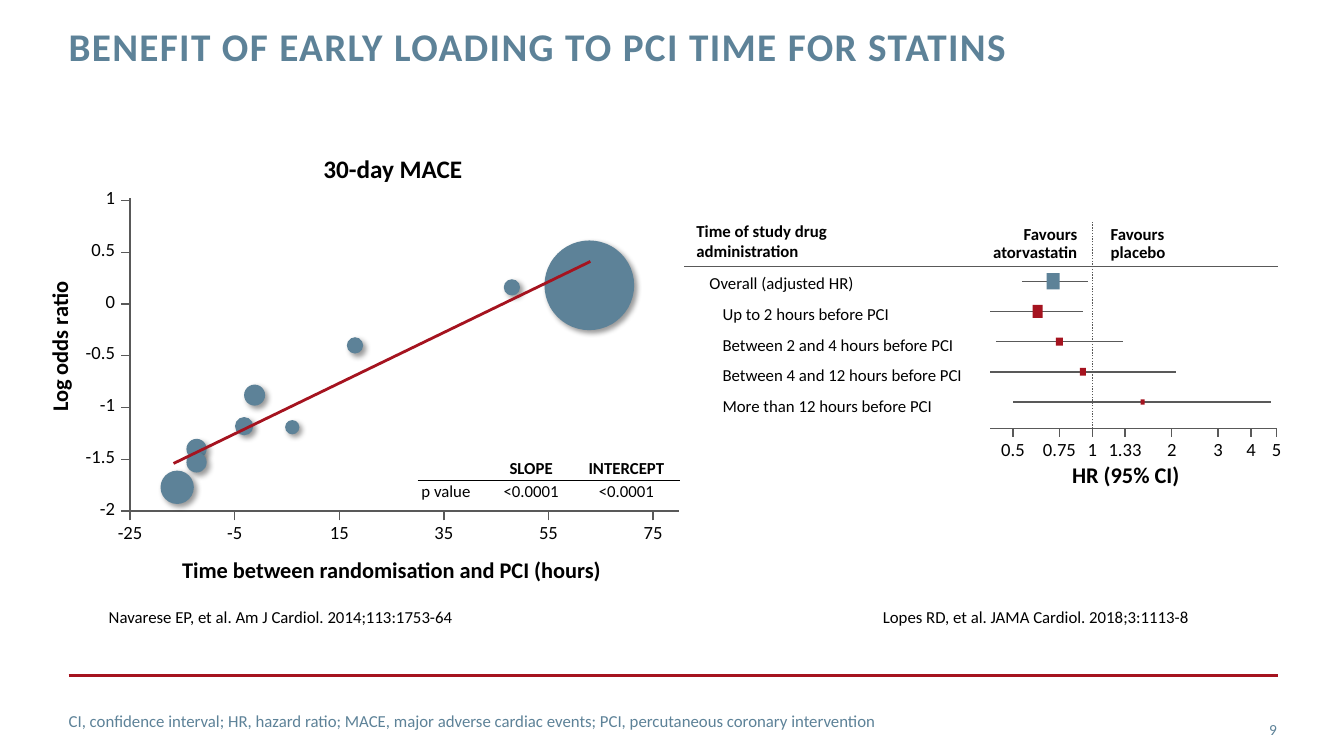
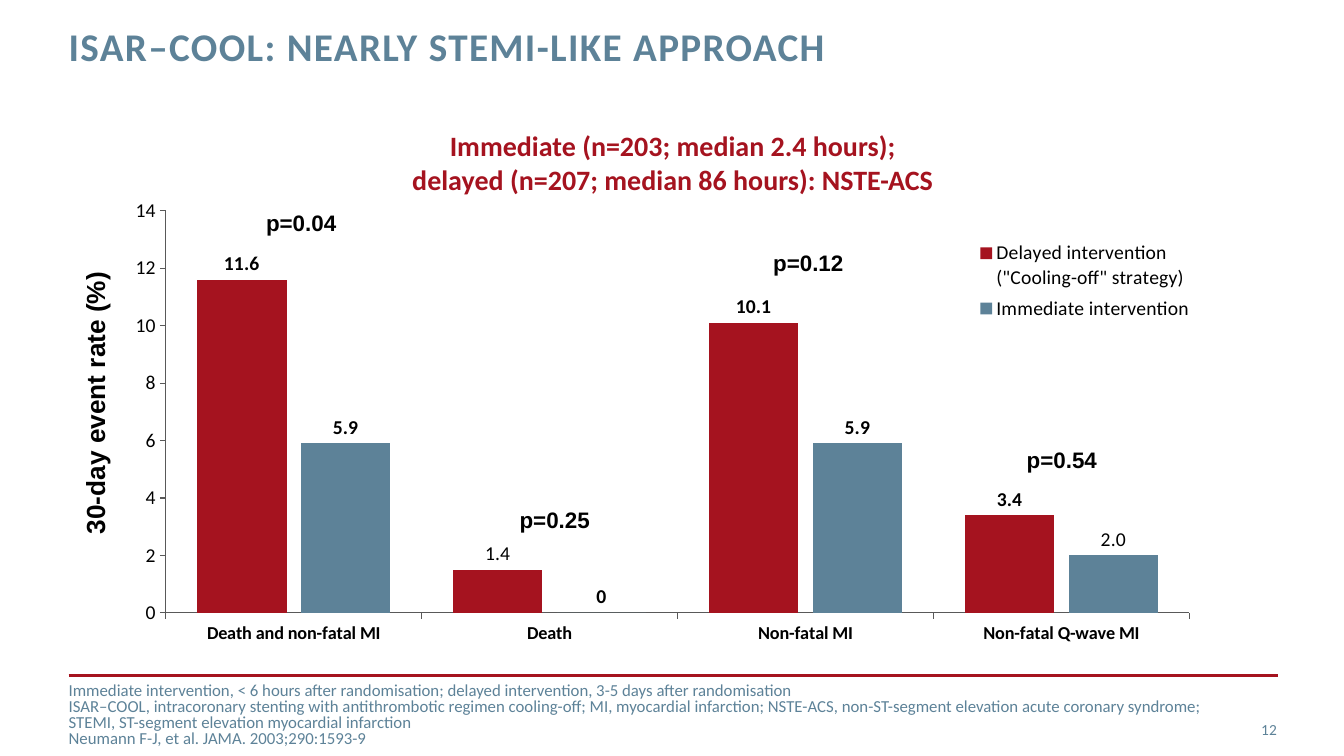
from dataclasses import dataclass
from math import log2

from lxml import etree
from pptx import Presentation
from pptx.chart.data import CategoryChartData
from pptx.dml.color import RGBColor
from pptx.enum import chart as charts, dml, shapes, text
from pptx.oxml import parse_xml
from pptx.oxml.ns import nsdecls, qn
from pptx.util import Cm, Pt

LEFT, CENTER, RIGHT = text.PP_ALIGN.LEFT, text.PP_ALIGN.CENTER, text.PP_ALIGN.RIGHT


@dataclass(frozen=True)
class Theme:
    blue: RGBColor = RGBColor(0x5D, 0x82, 0x98)
    red: RGBColor = RGBColor(0xA5, 0x13, 0x1F)
    black: RGBColor = RGBColor(0, 0, 0)
    grey: RGBColor = RGBColor(0x59, 0x59, 0x59)
    font: str = "Calibri"
    accent_font: str = "Arial"
    title: float = 28
    heading: float = 20
    axis_title: float = 16
    tick: float = 13.3
    chart: float = 14
    small: float = 12
    page: float = 11


THEME = Theme()


# Text helpers
def style_font(font, size, color=THEME.black, bold=False, name=THEME.font):
    font.name, font.size, font.bold = name, Pt(size), bold
    font.color.rgb = color


def prepare_frame(text_frame, anchor=text.MSO_ANCHOR.TOP):
    text_frame.margin_left = text_frame.margin_right = 0
    text_frame.margin_top = text_frame.margin_bottom = 0
    text_frame.word_wrap = True
    text_frame.auto_size = text.MSO_AUTO_SIZE.NONE
    text_frame.vertical_anchor = anchor


def write(text_frame, lines, size, align=LEFT, spacing=1.0, bullets_off=False, **style):
    for index, line in enumerate(lines):
        paragraph = text_frame.add_paragraph() if index else text_frame.paragraphs[0]
        paragraph.text = line
        paragraph.alignment = align
        paragraph.line_spacing = spacing
        paragraph.space_before = Pt(0)
        if bullets_off:
            properties = paragraph._p.get_or_add_pPr()
            properties.set("marL", "0")
            properties.set("indent", "0")
            etree.SubElement(properties, qn("a:buNone"))
        style_font(paragraph.font, size, **style)


def place(shape, box):
    shape.left, shape.top, shape.width, shape.height = map(Cm, box)


def add_label(slide, label, box, size, align=CENTER, spacing=0.9, rotation=0,
              anchor=text.MSO_ANCHOR.TOP, **style):
    shape = slide.shapes.add_textbox(*map(Cm, box))
    shape.rotation = rotation
    prepare_frame(shape.text_frame, anchor)
    write(shape.text_frame, [label], size, align, spacing, **style)


def fill_body(placeholder, lines, box, size, anchor=text.MSO_ANCHOR.TOP, **style):
    place(placeholder, box)
    prepare_frame(placeholder.text_frame, anchor)
    write(placeholder.text_frame, lines, size, bullets_off=True, **style)


# Drawing helpers
def add_line(slide, start, end, color=THEME.grey, width=1, dash=None):
    line = slide.shapes.add_connector(
        shapes.MSO_CONNECTOR.STRAIGHT, *map(Cm, (*start, *end)))
    line.line.color.rgb = color
    line.line.width = Pt(width)
    if dash:
        line.line.dash_style = dash
    etree.SubElement(line._element.spPr, qn("a:effectLst"))


def add_marker(slide, kind, center, size, color):
    (x, y), (width, height) = center, size
    marker = slide.shapes.add_shape(
        kind, *map(Cm, (x - width / 2, y - height / 2, width, height)))
    marker.fill.solid()
    marker.fill.fore_color.rgb = color
    marker.line.fill.background()
    marker.shadow.inherit = False
    return marker


def add_soft_shadow(shape):
    shape._element.spPr.find(qn("a:effectLst")).append(parse_xml(
        f'<a:outerShdw {nsdecls("a")} blurRad="50800" dist="38100" dir="2700000" '
        'algn="tl" rotWithShape="0"><a:srgbClr val="000000">'
        '<a:alpha val="40000"/></a:srgbClr></a:outerShdw>'))


# Title, rule, footnote and page number shared by the slides
def add_slide(presentation, layout, title, footnotes, footnote_box, spacing, page):
    slide = presentation.slides.add_slide(presentation.slide_layouts[layout])
    add_line(slide, (1.73, 17.02), (32.21, 17.02), THEME.red, 2)
    place(slide.shapes.title, (1.73, 0.69, 28, 2.24))
    prepare_frame(slide.shapes.title.text_frame)
    write(slide.shapes.title.text_frame, [title], THEME.title, spacing=Pt(30),
          color=THEME.blue, bold=True)
    slide.shapes.title.text_frame.paragraphs[0].font._element.set("spc", "100")
    fill_body(slide.placeholders[1], footnotes, footnote_box, THEME.small,
              text.MSO_ANCHOR.MIDDLE, spacing=spacing, color=THEME.blue)
    add_label(slide, page, (30, 17.86, 2.18, 1.02), THEME.page, RIGHT, 1.0,
              anchor=text.MSO_ANCHOR.MIDDLE, color=THEME.blue)
    return slide


# Scatter of effect against time
def scatter_point(hours, log_odds):
    return 3.28 + (hours + 25) / 100 * 13.18, 12.88 - (log_odds + 2) * 2.61


def add_scatter(slide):
    left, bottom = scatter_point(-25, -2)
    add_line(slide, (left - 0.23, bottom), (17.12, bottom))
    add_line(slide, (left, bottom), (left, 5))
    for value in ("1", "0.5", "0", "-0.5", "-1", "-1.5", "-2"):
        y = scatter_point(0, float(value))[1]
        add_line(slide, (left - 0.23, y), (left, y))
        add_label(slide, value, (1.9, y - 0.3, 1, 0.51), THEME.tick, RIGHT)
    for hours in range(-25, 76, 20):
        x = scatter_point(hours, 0)[0]
        add_line(slide, (x, bottom + 0.23), (x, bottom))
        add_label(slide, str(hours), (x - 0.5, 13.18, 1, 0.51), THEME.tick)
    add_label(slide, "30-day MACE", (7.4, 3.94, 5, 0.69), 18, bold=True)
    add_label(slide, "Log odds ratio", (-0.13, 8.43, 3.33, 0.61),
              THEME.axis_title, rotation=270, bold=True)
    add_label(slide, "Time between randomisation and PCI (hours)",
              (3.87, 14.1, 12, 0.61), THEME.axis_title, bold=True)

    # Hours, log odds ratio, bubble diameter
    bubbles = ((18, -0.4, 0.41), (48, 0.16, 0.41), (-3.2, -1.18, 0.46),
               (6, -1.19, 0.36), (-1.2, -0.88, 0.53), (62.8, 0.18, 2.26),
               (-12.3, -1.4, 0.51), (-12.3, -1.53, 0.51), (-16, -1.77, 0.84))
    for hours, log_odds, diameter in bubbles:
        bubble = add_marker(slide, shapes.MSO_SHAPE.OVAL, scatter_point(hours, log_odds),
                            (diameter, diameter), THEME.blue)
        add_soft_shadow(bubble)
    add_line(slide, scatter_point(-16.7, -1.54), scatter_point(63, 0.41), THEME.red, 2)


def add_p_value_table(slide):
    rows = (("", "SLOPE", "INTERCEPT"), ("p value", "<0.0001", "<0.0001"))
    table = slide.shapes.add_table(2, 3, *map(Cm, (10.54, 11.53, 6.58, 1.16))).table
    table.first_row = table.horz_banding = False
    for column, width in zip(table.columns, (1.78, 2.13, 2.67)):
        column.width = Cm(width)
    for row_index, row in enumerate(rows):
        for column_index, value in enumerate(row):
            cell = table.cell(row_index, column_index)
            cell.margin_left = cell.margin_right = Cm(0.08)
            cell.margin_top = cell.margin_bottom = Cm(0.03)
            write(cell.text_frame, [value], THEME.small,
                  LEFT if column_index == 0 else CENTER, bold=row_index == 0)
            side = "lnT" if row_index else "lnB"
            cell._tc.get_or_add_tcPr().append(parse_xml(
                f'<a:{side} {nsdecls("a")} w="9525"><a:solidFill>'
                f'<a:srgbClr val="{THEME.black}"/></a:solidFill></a:{side}>'))
            cell.fill.background()


# Forest plot of hazard ratios on a log scale
def hazard_x(ratio):
    return 27.53 + 2 * log2(ratio)


def add_forest_plot(slide):
    axis_y = 10.8
    add_line(slide, (hazard_x(0.41), axis_y), (hazard_x(5), axis_y))
    for ratio in ("0.5", "0.75", "1", "1.33", "2", "3", "4", "5"):
        x = hazard_x(float(ratio))
        add_line(slide, (x, axis_y + 0.2), (x, axis_y))
        add_label(slide, ratio, (x - 0.6, 11.1, 1.2, 0.51), THEME.tick)
    add_label(slide, "HR (95% CI)", (26.37, 11.71, 4, 0.61), THEME.axis_title, bold=True)
    add_line(slide, (hazard_x(1), axis_y), (hazard_x(1), 5.59),
             dash=dml.MSO_LINE.ROUND_DOT)
    add_line(slide, (17.25, 6.71), (32.21, 6.71))
    add_label(slide, "Favours\natorvastatin", (24.15, 5.69, 3, 0.91), THEME.small,
              RIGHT, bold=True)
    add_label(slide, "Favours\nplacebo", (27.99, 5.69, 3, 0.91), THEME.small,
              LEFT, bold=True)

    # Subgroup, low, estimate, high, marker size
    groups = (
        ("Overall (adjusted HR)", 0.54, 0.71, 0.96, (0.33, 0.41)),
        ("Up to 2 hours before PCI", 0.41, 0.62, 0.92, (0.25, 0.33)),
        ("Between 2 and 4 hours before PCI", 0.43, 0.75, 1.31, (0.18, 0.2)),
        ("Between 4 and 12 hours before PCI", 0.41, 0.92, 2.08, (0.15, 0.2)),
        ("More than 12 hours before PCI", 0.5, 1.55, 4.75, (0.1, 0.13)),
    )
    for index, (_, low, estimate, high, size) in enumerate(groups):
        y = 7.09 + index * 0.76
        add_line(slide, (hazard_x(low), y), (hazard_x(high), y))
        add_marker(slide, shapes.MSO_SHAPE.RECTANGLE, (hazard_x(estimate), y), size,
                   THEME.red if index else THEME.blue)

    names = slide.shapes.add_textbox(*map(Cm, (17.55, 5.56, 7.2, 4.95))).text_frame
    prepare_frame(names)
    write(names, ["Time of study drug\nadministration"] + [group[0] for group in groups],
          THEME.small)
    heading, *rows = names.paragraphs
    heading.font.bold = True
    heading.space_after = Pt(4)
    for index, row in enumerate(rows):
        row.line_spacing, row.space_after = 1.33, Pt(2.7)
        row._p.get_or_add_pPr().set("marL", str(Cm(0.66 if index else 0.33)))


# Column chart of event rates
def set_layout(parent, position, x, y, width, height, inner=False):
    for layout in parent.findall(qn("c:layout")):
        parent.remove(layout)
    target = '<c:layoutTarget val="inner"/>' if inner else ""
    parent.insert(position, parse_xml(
        f'<c:layout {nsdecls("c")}><c:manualLayout>{target}'
        '<c:xMode val="edge"/><c:yMode val="edge"/>'
        f'<c:x val="{x}"/><c:y val="{y}"/><c:w val="{width}"/><c:h val="{height}"/>'
        '</c:manualLayout></c:layout>'))


def style_axis(axis, size, bold=False):
    axis.has_major_gridlines = False
    axis.major_tick_mark = charts.XL_TICK_MARK.OUTSIDE
    axis.format.line.color.rgb = THEME.grey
    axis.format.line.width = Pt(0.75)
    style_font(axis.tick_labels.font, size, bold=bold)


def add_event_chart(slide):
    data = CategoryChartData()
    data.categories = ("Death and non-fatal MI", "Death", "Non-fatal MI",
                       "Non-fatal Q-wave MI")
    data.add_series('Delayed intervention ("Cooling-off" strategy)', (11.6, 1.5, 10.1, 3.4))
    data.add_series("Immediate intervention", (5.9, 0, 5.9, 2))
    chart = slide.shapes.add_chart(charts.XL_CHART_TYPE.COLUMN_CLUSTERED,
                                   *map(Cm, (2.79, 4.72, 27.74, 11.79)), data).chart
    chart.has_title = False
    style_font(chart.font, 10)
    style_axis(chart.category_axis, 13, bold=True)
    style_axis(chart.value_axis, THEME.chart)
    chart.value_axis.minimum_scale, chart.value_axis.maximum_scale = 0, 14
    chart.value_axis.major_unit = 2

    plot = chart.plots[0]
    plot.gap_width, plot.overlap, plot.vary_by_categories = 70, -16, False
    custom_labels = ((1, "1.4"), (3, "2.0"))
    for series, color, (point, label) in zip(
            plot.series, (THEME.red, THEME.blue), custom_labels):
        series.format.fill.solid()
        series.format.fill.fore_color.rgb = color
        labels = series.data_labels
        labels.show_value = True
        labels.position = charts.XL_LABEL_POSITION.OUTSIDE_END
        style_font(labels.font, THEME.chart, bold=True)
        custom = series.points[point].data_label
        write(custom.text_frame, [label], THEME.chart, CENTER)
        custom.position = charts.XL_LABEL_POSITION.OUTSIDE_END

    chart.has_legend = True
    chart.legend.position = charts.XL_LEGEND_POSITION.CORNER
    chart.legend.include_in_layout = False
    style_font(chart.legend.font, THEME.chart)
    set_layout(chart.legend._element, 1, 0.78, 0.1, 0.21, 0.2)
    set_layout(chart._chartSpace.chart.plotArea, 0, 0.05, 0.05, 0.93, 0.86, inner=True)


def main():
    presentation = Presentation()
    presentation.slide_width, presentation.slide_height = Cm(33.87), Cm(19.05)

    slide = add_slide(
        presentation, 1, "BENEFIT OF EARLY LOADING TO PCI TIME FOR STATINS",
        ["CI, confidence interval; HR, hazard ratio; MACE, major adverse cardiac events; "
         "PCI, percutaneous coronary intervention"],
        (1.73, 17.65, 22.56, 1.02), 1.0, "9")
    add_scatter(slide)
    add_p_value_table(slide)
    add_forest_plot(slide)
    for x, citation in ((2.74, "Navarese EP, et al. Am J Cardiol. 2014;113:1753-64"),
                        (22.25, "Lopes RD, et al. JAMA Cardiol. 2018;3:1113-8")):
        add_label(slide, citation, (x, 15.29, 10, 0.51), THEME.small, LEFT, 1.0)

    slide = add_slide(
        presentation, 3, "ISAR–COOL: NEARLY STEMI-LIKE APPROACH",
        ["Immediate intervention, < 6 hours after randomisation; delayed intervention, "
         "3-5 days after randomisation",
         "ISAR–COOL, intracoronary stenting with antithrombotic regimen cooling-off; "
         "MI, myocardial infarction; NSTE-ACS, non-ST-segment elevation acute coronary "
         "syndrome;\nSTEMI, ST-segment elevation myocardial infarction",
         "Neumann F-J, et al. JAMA. 2003;290:1593-9"],
        (1.73, 17.53, 29.62, 1.02), 0.8, "12")
    fill_body(slide.placeholders[2],
              ["Immediate (n=203; median 2.4 hours);\n"
               "delayed (n=207; median 86 hours): NSTE-ACS"],
              (1.73, 3.25, 30.45, 1.8), THEME.heading, align=CENTER,
              color=THEME.red, bold=True)
    add_event_chart(slide)
    add_label(slide, "30-day event rate (%)", (-0.94, 9.76, 6.65, 0.79), 18.7,
              spacing=1.0, rotation=270, bold=True, name=THEME.accent_font)
    p_values = (("p=0.04", 5.28), ("p=0.25", 12.75), ("p=0.12", 6.27), ("p=0.54", 11.23))
    for index, (p_value, top) in enumerate(p_values):
        add_label(slide, p_value, (6.09 + index * 6.39, top, 3, 0.69), THEME.axis_title,
                  spacing=1.0, bold=True, name=THEME.accent_font)

    presentation.save("out.pptx")


if __name__ == "__main__":
    main()
